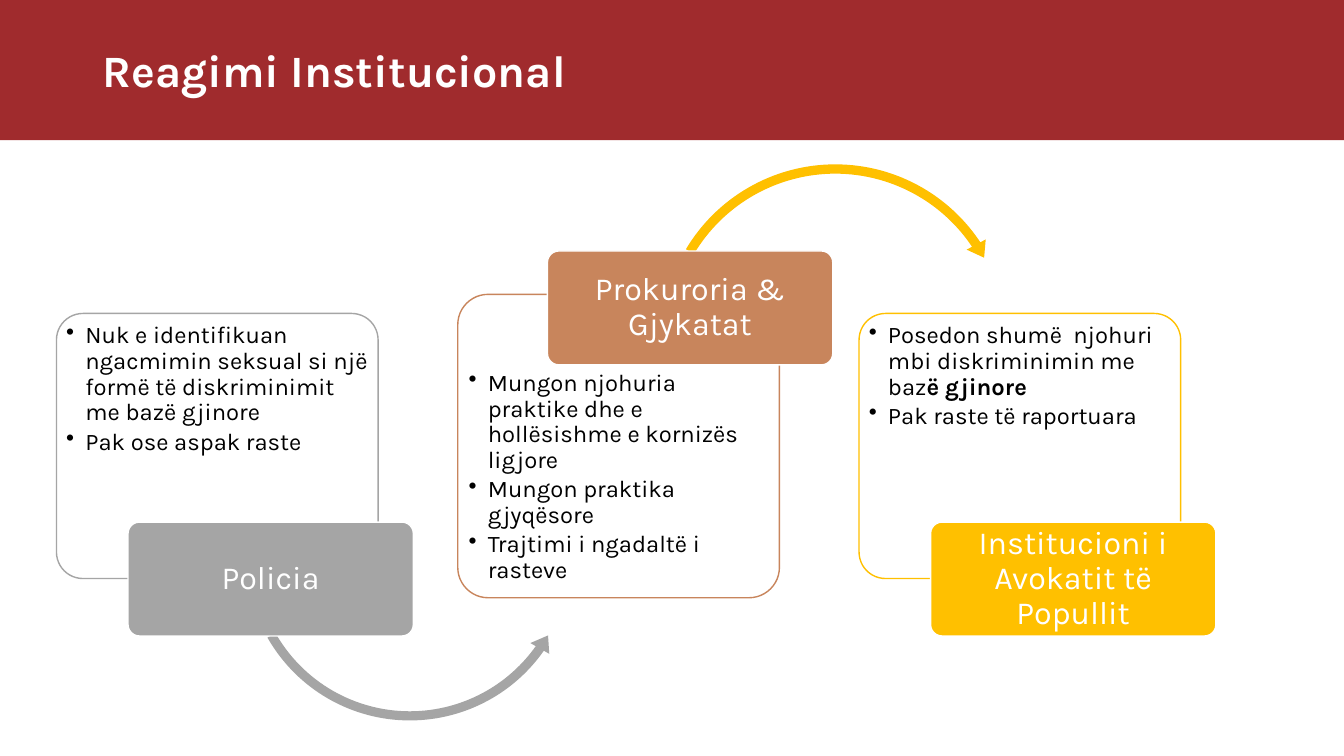
from lxml.etree import SubElement
from pptx import Presentation
from pptx.dml.color import RGBColor
from pptx.enum.shapes import MSO_SHAPE as Shape
from pptx.enum.text import MSO_ANCHOR as Anchor, PP_ALIGN as Align
from pptx.oxml.ns import qn
from pptx.util import Inches, Pt

COLORS = {
    "header": "A02B2D",
    "police": "A5A5A5",
    "courts": "C8855C",
    "ombudsman": "FFC000",
    "white": "FFFFFF",
    "black": "000000",
}
FONT = "Karla"
WIDTH, HEIGHT = 13.33, 7.5
FIRST_COLUMN, COLUMN_PITCH = 0.56, 3.98
CARD_WIDTH = 3.19
LABEL_WIDTH, LABEL_HEIGHT = 2.83, 1.13

STEPS = [
    {
        "color": "police", "label": "Policia",
        "card_top": 3.11, "card_height": 2.63, "text_inset": 0.02,
        "label_shift": 0.71, "label_top": 5.18,
        "arrow": (Shape.LEFT_CIRCULAR_ARROW, 1.82, 3.84, 3.37,
                  (0.027, 3.323, 21.095, 90.262, 0.032)),
        "points": [
            ["Nuk e identifikuan ngacmimin seksual si një formë "
             "të diskriminimit me bazë gjinore"],
            ["Pak ose aspak raste"],
        ],
    },
    {
        "color": "courts", "label": "Prokuroria & Gjykatat",
        "card_top": 2.92, "card_height": 3.01, "text_inset": 0.67,
        "label_shift": 0.89, "label_top": 2.49,
        "arrow": (Shape.CIRCULAR_ARROW, 1.96, 1.57, 3.57,
                  (0.026, 3.124, 195.838, 126.471, 0.03)),
        "arrow_color": "ombudsman",
        "points": [
            ["Mungon njohuria praktike dhe e hollësishme e kornizës ligjore"],
            ["Mungon praktika gjyqësore"],
            ["Trajtimi i ngadaltë i rasteve"],
        ],
    },
    {
        "color": "ombudsman", "label": "Institucioni i Avokatit të Popullit",
        "card_top": 3.11, "card_height": 2.63, "text_inset": 0.02,
        "label_shift": 0.71, "label_top": 5.18,
        "points": [
            ["Posedon shumë  njohuri mbi diskriminimin me baz", "ë gjinore"],
            ["Pak raste të raportuara"],
        ],
    },
]


def rgb(name):
    return RGBColor.from_string(COLORS[name])


def add_block(slide, kind, left, top, width, height, fill, outline=None):
    block = slide.shapes.add_shape(
        kind, Inches(left), Inches(top), Inches(width), Inches(height))
    block.shadow.inherit = False
    block.fill.solid()
    block.fill.fore_color.rgb = rgb(fill)
    if outline:
        block.line.color.rgb = rgb(outline)
        block.line.width = Pt(1)
    else:
        block.line.fill.background()
    return block


def set_frame(frame, anchor, side, top, bottom):
    frame.word_wrap = True
    frame.vertical_anchor = anchor
    frame.margin_left = frame.margin_right = Inches(side)
    frame.margin_top, frame.margin_bottom = Inches(top), Inches(bottom)


def style_paragraph(paragraph, size, color, align=Align.LEFT, bold=False):
    paragraph.alignment = align
    paragraph.line_spacing = 0.9
    for run in paragraph.runs:
        run.font.name = FONT
        run.font.size = Pt(size)
        run.font.bold = bold
        run.font.color.rgb = rgb(color)


def add_bullet(paragraph):
    properties = paragraph._p.get_or_add_pPr()
    properties.set("marL", str(Inches(0.19)))
    properties.set("indent", str(-Inches(0.19)))
    SubElement(properties, qn("a:buChar"), char="•")


def add_header(slide):
    add_block(slide, Shape.RECTANGLE, 0, 0, WIDTH, 1.39, "header")
    title = slide.shapes.add_textbox(
        Inches(0.92), Inches(0.15), Inches(11.5), Inches(1.14)).text_frame
    set_frame(title, Anchor.MIDDLE, 0.1, 0.05, 0.05)
    title.text = "Reagimi Institucional"
    style_paragraph(title.paragraphs[0], 32, "white", bold=True)


def add_card(slide, left, step):
    card = add_block(slide, Shape.ROUNDED_RECTANGLE, left, step["card_top"],
                     CARD_WIDTH, step["card_height"], "white", step["color"])
    card.adjustments[0] = 0.1
    frame = card.text_frame
    set_frame(frame, Anchor.TOP, 0.02, step["text_inset"], 0.02)
    for index, (plain, *strong) in enumerate(step["points"]):
        point = frame.add_paragraph() if index else frame.paragraphs[0]
        point.text = plain
        add_bullet(point)
        for words in strong:
            point.add_run().text = words
        style_paragraph(point, 17, "black")
        point.space_after = Pt(2.5)
        for run in point.runs[1:]:
            run.font.bold = True


def add_arrow(slide, left, step):
    kind, shift, top, size, bends = step["arrow"]
    arrow = add_block(slide, kind, left + shift, top, size, size,
                      step.get("arrow_color", step["color"]))
    for index, bend in enumerate(bends):
        arrow.adjustments[index] = bend


def add_label(slide, left, step):
    label = add_block(slide, Shape.ROUNDED_RECTANGLE,
                      left + step["label_shift"], step["label_top"],
                      LABEL_WIDTH, LABEL_HEIGHT, step["color"], "white")
    label.adjustments[0] = 0.1
    set_frame(label.text_frame, Anchor.MIDDLE, 0.05, 0.03, 0.03)
    label.text_frame.text = step["label"]
    style_paragraph(label.text_frame.paragraphs[0], 23, "white", Align.CENTER)


def main():
    deck = Presentation()
    deck.slide_width, deck.slide_height = Inches(WIDTH), Inches(HEIGHT)
    slide = deck.slides.add_slide(deck.slide_layouts[6])
    add_header(slide)
    for column, step in enumerate(STEPS):
        left = FIRST_COLUMN + column * COLUMN_PITCH
        add_card(slide, left, step)
        if "arrow" in step:
            add_arrow(slide, left, step)
        add_label(slide, left, step)
    deck.save("out.pptx")


if __name__ == "__main__":
    main()
